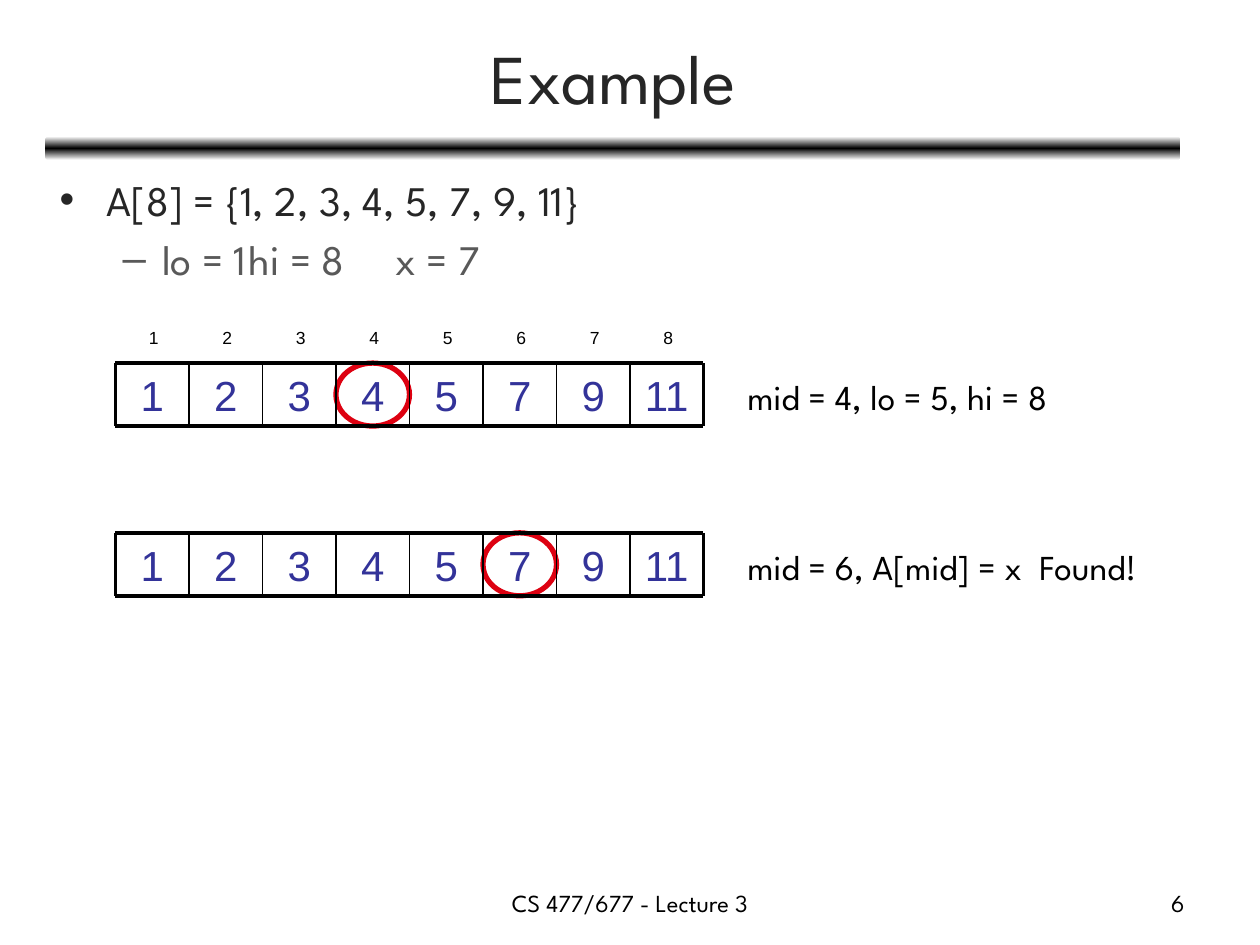
from copy import deepcopy

from lxml.etree import SubElement
from pptx import Presentation
from pptx.dml.color import RGBColor
from pptx.enum.shapes import MSO_CONNECTOR, MSO_SHAPE
from pptx.enum.text import MSO_ANCHOR, PP_ALIGN
from pptx.oxml.ns import qn
from pptx.util import Pt

COLORS = {
    "black": "000000",
    "white": "FFFFFF",
    "title": "262626",
    "detail": "595959",
    "value": "333399",
    "mark": "DD0111",
}
FORMATS = {
    "title": {"name": "League Spartan", "size": Pt(40), "color": "title"},
    "body": {"name": "League Spartan", "size": Pt(24), "color": "title"},
    "detail": {"name": "League Spartan", "size": Pt(24), "color": "detail"},
    "caption": {"name": "League Spartan", "size": Pt(20), "color": "black"},
    "footer": {"name": "League Spartan", "size": Pt(14), "color": "black"},
    "value": {"name": "Arial", "size": Pt(24), "color": "value"},
    "index": {"name": "Arial", "size": Pt(10), "color": "black"},
}

presentation = Presentation()
presentation.slide_width, presentation.slide_height = Pt(720), Pt(540)
slide = presentation.slides.add_slide(presentation.slide_layouts[6])


def add_text(lines, box, align=PP_ALIGN.LEFT, anchor=MSO_ANCHOR.TOP, wrap=True):
    """Add a text box; each line is a pair of text and format name."""
    frame = slide.shapes.add_textbox(*map(Pt, box)).text_frame
    frame.word_wrap, frame.vertical_anchor = wrap, anchor
    for number, (text, style) in enumerate(lines):
        paragraph = frame.add_paragraph() if number else frame.paragraphs[0]
        paragraph.alignment = align
        run = paragraph.add_run()
        run.text = text
        for key, value in FORMATS[style].items():
            if key == "color":
                run.font.color.rgb = RGBColor.from_string(COLORS[value])
            else:
                setattr(run.font, key, value)
    return frame


def add_line(start, end, width):
    line = slide.shapes.add_connector(MSO_CONNECTOR.STRAIGHT, *map(Pt, start + end))
    line.line.width = Pt(width)
    line.line.color.rgb = RGBColor.from_string(COLORS["black"])
    SubElement(line._element.spPr, qn("a:effectLst"))


# Shaded bar under the title
bar = slide.shapes.add_shape(
    MSO_SHAPE.ROUNDED_RECTANGLE, Pt(26), Pt(78), Pt(648.5), Pt(13.5))
bar.shadow.inherit = False
bar.line.fill.background()
bar.fill.gradient()
bar.fill.gradient_angle = 90
stop_list = bar.fill._fill._gradFill.find(qn("a:gsLst"))
stop_list.append(deepcopy(stop_list[0]))
for stop, position, color in zip(
        bar.fill.gradient_stops, (0, 0.5, 1), ("white", "black", "white")):
    stop.position = position
    stop.color.rgb = RGBColor.from_string(COLORS[color])

# Title and footer
add_text([("Example", "title")], (26.5, 8, 648, 71), PP_ALIGN.CENTER, MSO_ANCHOR.MIDDLE)
add_text([("CS 477/677 - Lecture 3", "footer")], (246, 504, 228, 25), PP_ALIGN.CENTER)
add_text([("6", "footer")], (516, 504, 168, 25), PP_ALIGN.RIGHT)

# Bulleted problem statement
body = add_text(
    [("A[8] = {1, 2, 3, 4, 5, 7, 9, 11}", "body"),
     ("lo = 1\thi = 8\t  x = 7", "detail")],
    (27, 96, 650, 109))
for paragraph, level, bullet, margin, indent in zip(
        body.paragraphs, (0, 1), "•–", (27, 58.5), (-27, -22.5)):
    paragraph.level = level
    paragraph.space_before = Pt(4.8)
    properties = paragraph._p.get_or_add_pPr()
    properties.set("marL", str(Pt(margin)))
    properties.set("indent", str(Pt(indent)))
    SubElement(properties, qn("a:buFont"), typeface="Arial")
    SubElement(properties, qn("a:buChar"), char=bullet)

# Search steps: array top, position of mid, caption, caption width
VALUES = [1, 2, 3, 4, 5, 7, 9, 11]
LEFT, CELL_WIDTH, CELL_HEIGHT = 66, 42, 36
RIGHT = LEFT + CELL_WIDTH * len(VALUES)
STEPS = [
    (207.5, 4, "mid = 4, lo = 5, hi = 8", 216),
    (304.5, 6, "mid = 6, A[mid] = x  Found!", 246),
]
for top, mid, caption, caption_width in STEPS:
    bottom = top + CELL_HEIGHT
    add_text([(caption, "caption")], (420, top + 3.5, caption_width, 31))

    # Ring around the middle element
    ring = slide.shapes.add_shape(
        MSO_SHAPE.OVAL, Pt(LEFT + (mid - 1) * CELL_WIDTH), Pt(top),
        Pt(CELL_WIDTH), Pt(CELL_HEIGHT))
    ring.shadow.inherit = False
    ring.fill.background()
    ring.line.width = Pt(3)
    ring.line.color.rgb = RGBColor.from_string(COLORS["mark"])

    # Values and grid lines
    for column, value in enumerate(VALUES):
        add_text([(str(value), "value")],
                 (LEFT + column * CELL_WIDTH, top, CELL_WIDTH, CELL_HEIGHT),
                 PP_ALIGN.CENTER, MSO_ANCHOR.MIDDLE)
    for y in (top, bottom):
        add_line((LEFT, y), (RIGHT, y), 2.25)
    for column in range(len(VALUES) + 1):
        x = LEFT + column * CELL_WIDTH
        add_line((x, top), (x, bottom), 2.25 if x in (LEFT, RIGHT) else 1)

# Index labels above the first array
for column in range(len(VALUES)):
    add_text([(str(column + 1), "index")],
             (LEFT + 12 + column * CELL_WIDTH, 183.5, 18, 19.5), wrap=False)

presentation.save("out.pptx")
